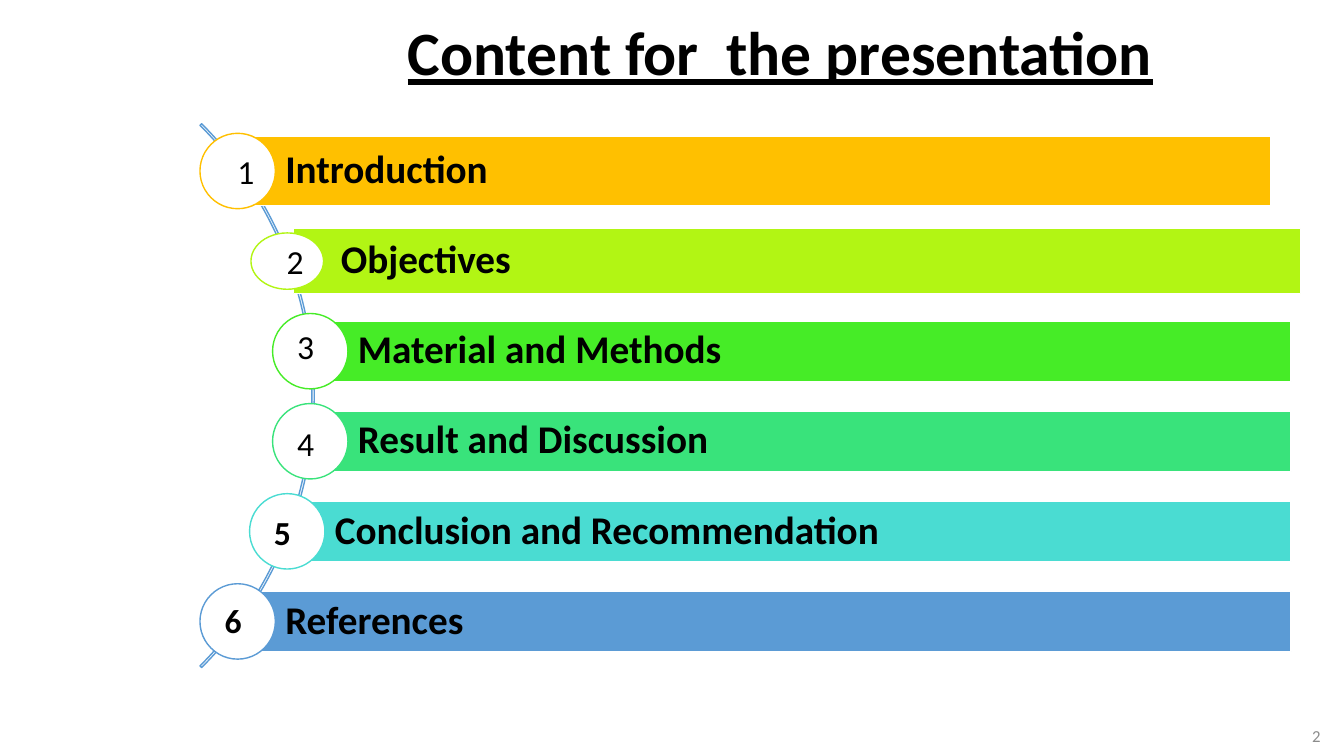
from dataclasses import dataclass

from pptx import Presentation
from pptx.dml.color import RGBColor
from pptx.enum.shapes import MSO_SHAPE
from pptx.enum.text import MSO_ANCHOR, PP_ALIGN
from pptx.util import Cm, Pt

FONT = "Calibri"
BLACK = RGBColor(0x00, 0x00, 0x00)
WHITE = RGBColor(0xFF, 0xFF, 0xFF)
GREY = RGBColor(0x8C, 0x8C, 0x8C)
AMBER = RGBColor(0xFF, 0xC0, 0x00)
LIME = RGBColor(0xB2, 0xF5, 0x14)
GREEN = RGBColor(0x46, 0xEC, 0x27)
EMERALD = RGBColor(0x39, 0xE3, 0x7B)
TURQUOISE = RGBColor(0x4A, 0xDC, 0xD2)
BLUE = RGBColor(0x5B, 0x9B, 0xD5)

# Row centres, in cm
FIRST_ROW = 4.31
ROW_PITCH = 2.27


@dataclass
class Topic:
    title: str
    color: RGBColor
    disc_center: float
    bar_left: float
    number: str
    number_box: tuple  # left, top, width
    number_bold: bool = False
    bar_right: float = 32.54
    bar_height: float = 1.52
    disc_size: tuple = (1.9, 1.9)


TOPICS = [
    Topic("Introduction", AMBER, 5.99, 5.99, " 1", (5.54, 3.68, 1.24),
          bar_right=32.03, bar_height=1.75),
    Topic("Objectives", LIME, 7.24, 7.39, " 2", (6.78, 5.94, 1.3),
          bar_right=32.77, bar_height=1.65, disc_size=(1.83, 1.42)),
    Topic("Material and Methods", GREEN, 7.82, 7.82, "3", (7.24, 8.08, 1.07)),
    Topic("Result and Discussion", EMERALD, 7.82, 7.82, "4", (7.24, 10.52, 1.07)),
    Topic("Conclusion and Recommendation", TURQUOISE, 7.24, 7.24, "5",
          (6.65, 12.78, 1.17), number_bold=True),
    Topic("References", BLUE, 5.99, 5.99, "6", (5.41, 14.99, 1.24),
          number_bold=True),
]


def write(frame, text, size, color=BLACK, bold=False, underline=False,
          align=PP_ALIGN.LEFT, anchor=MSO_ANCHOR.MIDDLE, spacing=1.0):
    frame.text = text
    frame.word_wrap = True
    frame.vertical_anchor = anchor
    paragraph = frame.paragraphs[0]
    paragraph.alignment = align
    paragraph.line_spacing = spacing
    font = paragraph.runs[0].font
    font.name, font.size, font.bold = FONT, Pt(size), bold
    font.underline = underline
    font.color.rgb = color


def add_text(slide, left, top, width, height, text, size, **style):
    box = slide.shapes.add_textbox(Cm(left), Cm(top), Cm(width), Cm(height))
    write(box.text_frame, text, size, **style)


def add_figure(slide, kind, left, top, width, height, fill, line):
    figure = slide.shapes.add_shape(kind, Cm(left), Cm(top), Cm(width), Cm(height))
    figure.shadow.inherit = False
    if fill is None:
        figure.fill.background()
    else:
        figure.fill.solid()
        figure.fill.fore_color.rgb = fill
    figure.line.color.rgb = line
    figure.line.width = Pt(1)
    return figure


def add_arc(slide):
    arc = add_figure(slide, MSO_SHAPE.BLOCK_ARC, -11.46, 0.28, 19.38, 19.38, None, BLUE)
    # Start angle, end angle and thickness
    for index, value in enumerate((189, 27, 0.003)):
        arc.adjustments[index] = value


def add_bar(slide, topic, middle):
    bar = add_figure(slide, MSO_SHAPE.RECTANGLE, topic.bar_left,
                     middle - topic.bar_height / 2,
                     topic.bar_right - topic.bar_left, topic.bar_height,
                     topic.color, WHITE)
    frame = bar.text_frame
    frame.margin_left = Cm(1.2)
    frame.margin_top = frame.margin_right = frame.margin_bottom = Cm(0.2)
    write(frame, topic.title, 28, bold=True, spacing=0.9)


def add_disc(slide, topic, middle):
    width, height = topic.disc_size
    add_figure(slide, MSO_SHAPE.OVAL, topic.disc_center - width / 2,
               middle - height / 2, width, height, WHITE, topic.color)


def main():
    prs = Presentation()
    prs.slide_width, prs.slide_height = Cm(33.87), Cm(19.05)
    slide = prs.slides.add_slide(prs.slide_layouts[6])

    # Title and slide number
    add_text(slide, 5.72, 0.28, 27.89, 2.26, "Content for  the presentation", 44,
             bold=True, underline=True, align=PP_ALIGN.CENTER, spacing=0.9)
    add_text(slide, 25.91, 18.03, 7.62, 1.02, "2", 12, color=GREY,
             align=PP_ALIGN.RIGHT)

    # Arc behind the list of topics
    add_arc(slide)

    # Topic bars with their numbered discs
    for row, topic in enumerate(TOPICS):
        middle = FIRST_ROW + row * ROW_PITCH
        add_bar(slide, topic, middle)
        add_disc(slide, topic, middle)
        add_text(slide, *topic.number_box, 1.27, topic.number, 24,
                 bold=topic.number_bold, anchor=MSO_ANCHOR.TOP)

    prs.save("out.pptx")


if __name__ == "__main__":
    main()
